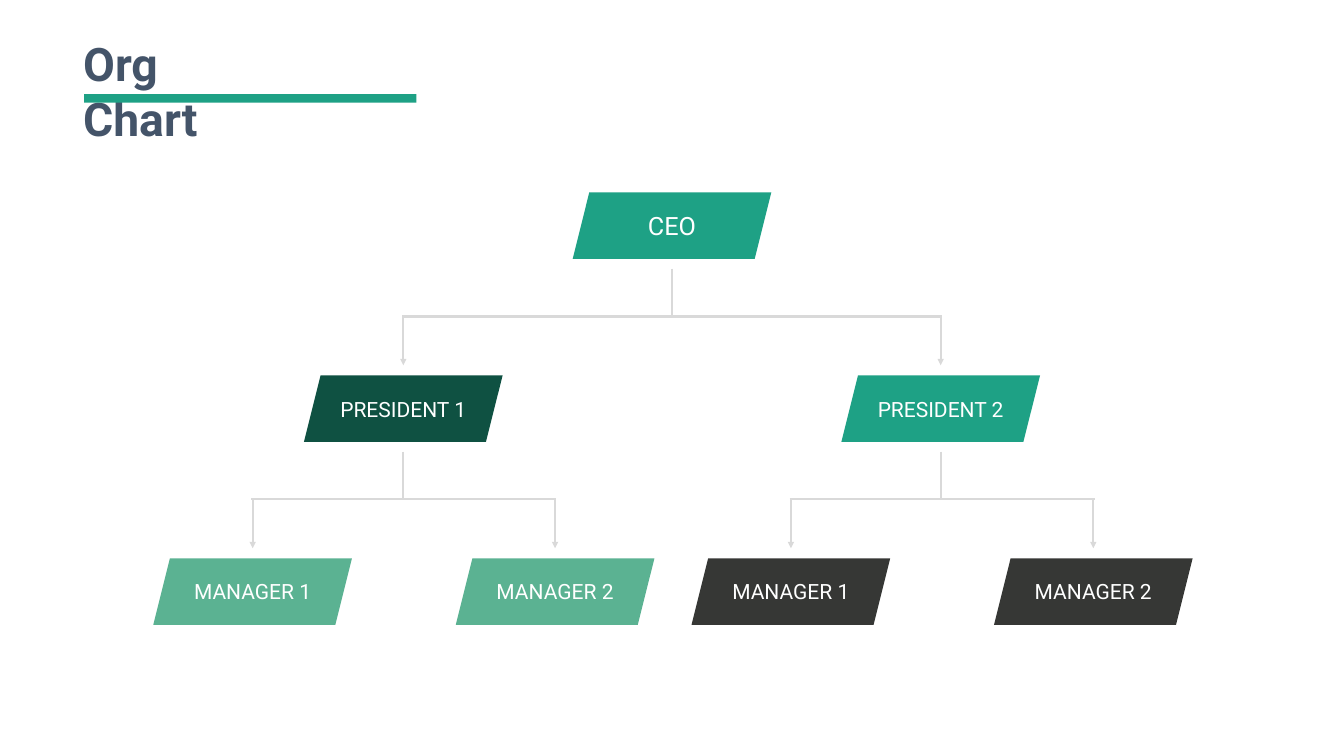
"""Build a three-level org chart slide."""
import pptx
import pptx.util
import pptx.dml.color
import pptx.enum.shapes
import pptx.enum.text
import pptx.oxml
import pptx.oxml.ns

Cm, Pt = pptx.util.Cm, pptx.util.Pt
RGBColor = pptx.dml.color.RGBColor
SHAPE = pptx.enum.shapes.MSO_SHAPE
ALIGN = pptx.enum.text.PP_ALIGN
ANCHOR = pptx.enum.text.MSO_ANCHOR

GREEN = RGBColor(0x1E, 0xA1, 0x85)
DARK_GREEN = RGBColor(0x0F, 0x51, 0x42)
LIGHT_GREEN = RGBColor(0x5B, 0xB2, 0x92)
CHARCOAL = RGBColor(0x36, 0x37, 0x35)
SLATE = RGBColor(0x44, 0x54, 0x69)
GREY = RGBColor(0xD9, 0xD9, 0xD9)
WHITE = RGBColor(0xFF, 0xFF, 0xFF)
FONT = "Roboto"

TITLE = "Org Chart"
CHART = ("CEO", 33.86, GREEN, [
    ("PRESIDENT 1", 20.32, DARK_GREEN, [
        ("MANAGER 1", 12.73, LIGHT_GREEN, []),
        ("MANAGER 2", 27.97, LIGHT_GREEN, []),
    ]),
    ("PRESIDENT 2", 47.4, GREEN, [
        ("MANAGER 1", 39.85, CHARCOAL, []),
        ("MANAGER 2", 55.09, CHARCOAL, []),
    ]),
])

BOX_W, BOX_H = 10.01, 3.35
TOP, PITCH = 9.7, 9.22
STEM, BUS, TIP = 3.84, 6.25, 8.71
OVERHANG = 0.06


def set_font(p, size, color, bold=False):
    p.font.name, p.font.size, p.font.bold = FONT, Pt(size), bold
    p.font.color.rgb = color


def add_filled(s, kind, x, y, w, h, color):
    sp = s.shapes.add_shape(kind, Cm(x), Cm(y), Cm(w), Cm(h))
    sp.shadow.inherit = False
    sp.fill.solid()
    sp.fill.fore_color.rgb = color
    sp.line.fill.background()
    return sp


def add_line(s, x1, y1, x2, y2, arrow=False):
    line = s.shapes.add_connector(pptx.enum.shapes.MSO_CONNECTOR.STRAIGHT,
                                  Cm(x1), Cm(y1), Cm(x2), Cm(y2))
    line.line.color.rgb = GREY
    line.line.width = Pt(3)
    if arrow:
        tail = pptx.oxml.parse_xml(
            f'<a:tailEnd {pptx.oxml.ns.nsdecls("a")} type="triangle"/>')
        line.line._get_or_add_ln().append(tail)
    line._element.spPr.append(
        pptx.oxml.parse_xml(f'<a:effectLst {pptx.oxml.ns.nsdecls("a")}/>'))


def add_branch(s, node, level=0):
    label, center, color, reports = node
    top = TOP + level * PITCH
    sp = add_filled(s, SHAPE.PARALLELOGRAM, center - BOX_W / 2, top, BOX_W, BOX_H, color)
    tf = sp.text_frame
    tf.margin_left = tf.margin_right = tf.margin_top = tf.margin_bottom = 0
    tf.vertical_anchor = ANCHOR.MIDDLE
    p = tf.paragraphs[0]
    p.text, p.alignment = label, ALIGN.CENTER
    set_font(p, 30 if level else 36, WHITE)
    if reports:
        bus = top + BUS
        centers = [report[1] for report in reports]
        add_line(s, center, top + STEM, center, bus)
        add_line(s, min(centers) - OVERHANG, bus, max(centers) + OVERHANG, bus)
        for x in centers:
            add_line(s, x, bus, x, top + TIP, arrow=True)
    for report in reports:
        add_branch(s, report, level + 1)


def add_title(s):
    sp = s.shapes.title
    sp.left, sp.top, sp.width, sp.height = Cm(3.94), Cm(1.52), Cm(10.57), Cm(3.07)
    tf = sp.text_frame
    tf.word_wrap = True
    tf.auto_size = pptx.enum.text.MSO_AUTO_SIZE.NONE
    tf.vertical_anchor = ANCHOR.TOP
    tf.margin_left = tf.margin_top = Cm(0.25)
    tf.margin_right = Cm(1)
    p = tf.paragraphs[0]
    p.text, p.alignment = TITLE, ALIGN.LEFT
    set_font(p, 66, SLATE, bold=True)
    add_filled(s, SHAPE.RECTANGLE, 4.24, 4.75, 16.74, 0.43, GREEN)


def main():
    prs = pptx.Presentation()
    prs.slide_width, prs.slide_height = Cm(67.72), Cm(38.1)
    s = prs.slides.add_slide(prs.slide_layouts[5])
    add_title(s)
    add_branch(s, CHART)
    prs.save("out.pptx")


if __name__ == "__main__":
    main()
